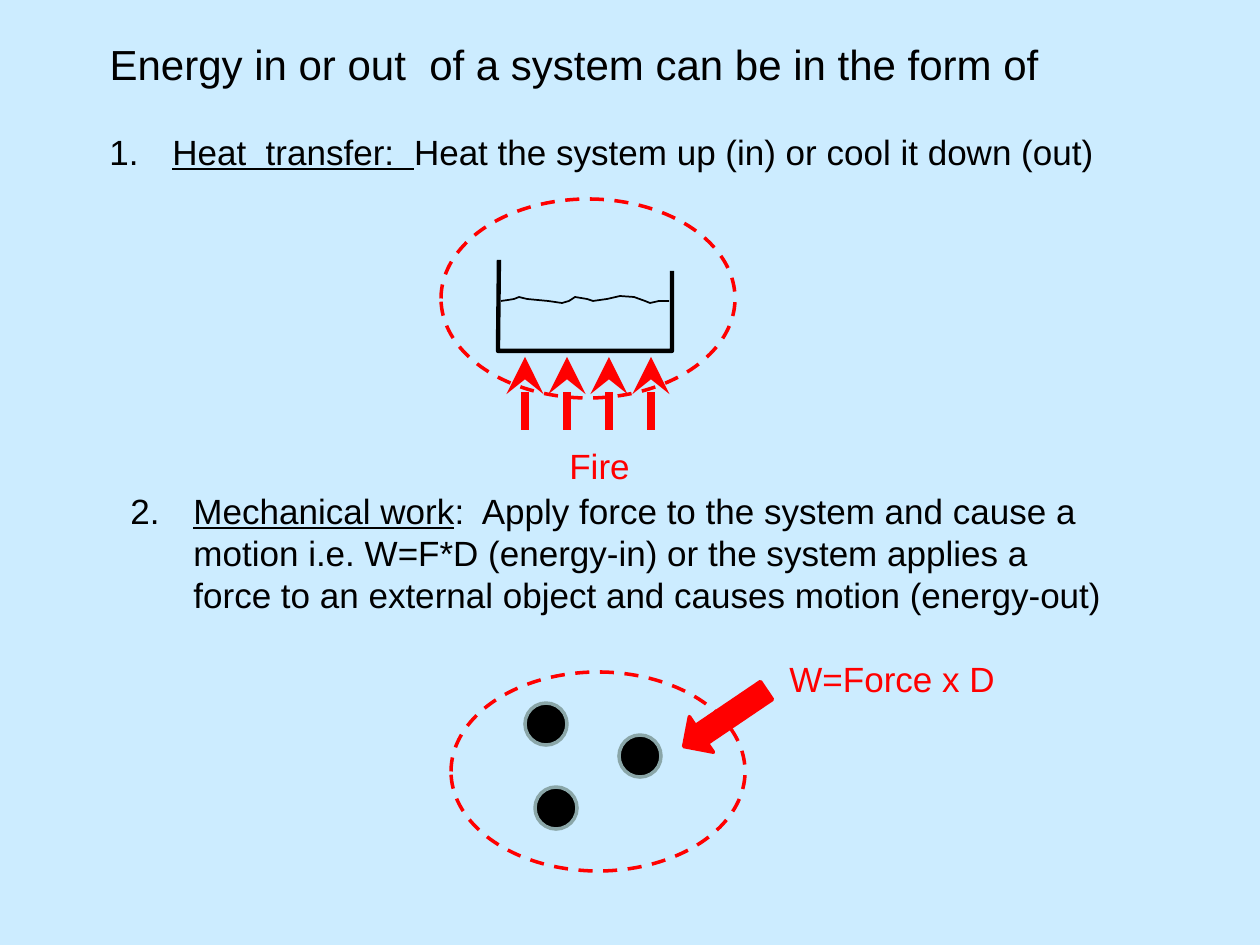
import pptx
import pptx.util
import pptx.dml.color
import pptx.enum.dml
import pptx.enum.shapes
import pptx.enum.text
import lxml.etree

UNIT = 914400 / 126
SHAPE = pptx.enum.shapes.MSO_SHAPE
NS = "http://schemas.openxmlformats.org/drawingml/2006/main"
RED, BLACK, GREY, SKY = "FF0000", "000000", "8AA6A8", "CCECFF"


def px(*nums):
    return [round(n * UNIT) for n in nums]


def paint(fmt, tint):
    fmt.solid()
    fmt.fore_color.rgb = pptx.dml.color.RGBColor.from_string(tint)


deck = pptx.Presentation()
deck.slide_width, deck.slide_height = px(1260, 945)
slide = deck.slides.add_slide(deck.slide_layouts[5])
paint(slide.background.fill, SKY)
shapes = slide.shapes

title = shapes.title
title.left, title.top, title.width, title.height = px(97, 32, 1047, 62)

head = [("Energy in or out  of a system can be in the form of", False)]
heat = [("Heat  transfer:  ", True),
        ("Heat the system up (in) or cool it down (out)", False)]
work = [("Mechanical work", True),
        (":  Apply force to the system and cause a motion i.e. W=F*D "
         "(energy-in) or the system applies a force to an external object "
         "and causes motion (energy-out)", False)]
texts = [
    (title, head, 24, BLACK, 0),
    (px(97, 124, 1047, 55), heat, 20, BLACK, 1),
    (px(118, 483, 1000, 140), work, 20, BLACK, 2),
    (px(557, 438, 168, 55), [("Fire", False)], 20, RED, 0),
    (px(777, 651, 273, 55), [("W=Force x D", False)], 20, RED, 0),
]
for spot, runs, size, tint, num in texts:
    box = spot if spot is title else shapes.add_textbox(*spot)
    frame = box.text_frame
    look = {"word_wrap": True,
            "auto_size": pptx.enum.text.MSO_AUTO_SIZE.NONE,
            "vertical_anchor": pptx.enum.text.MSO_ANCHOR.TOP}
    for key, val in look.items():
        setattr(frame, key, val)
    para = frame.paragraphs[0]
    para.alignment = pptx.enum.text.PP_ALIGN.LEFT
    for words, under in runs:
        run = para.add_run()
        run.text = words
        style = {"name": "Arial", "size": pptx.util.Pt(size),
                 "underline": under}
        for key, val in style.items():
            setattr(run.font, key, val)
        paint(run.font.fill, tint)
    if num:
        props = para._p.get_or_add_pPr()
        dent = px(63)[0]
        props.set("marL", str(dent))
        props.set("indent", str(-dent))
        mark = lxml.etree.SubElement(props, f"{{{NS}}}buAutoNum")
        mark.set("type", "arabicPeriod")
        mark.set("startAt", str(num))

rings = [(451, 672, 294, 199), (441, 199, 294, 199)]
balls = [(525, 703, 42, 42), (619, 735, 42, 42), (535, 787, 42, 42)]
solids = [(SHAPE.OVAL, spot, None, RED, 0) for spot in rings]
solids += [(SHAPE.OVAL, spot, BLACK, GREY, 0) for spot in balls]
solids += [(SHAPE.RIGHT_ARROW, (675, 697, 100, 43), RED, RED, 145.9)]
for kind, spot, fill, edge, turn in solids:
    item = shapes.add_shape(kind, *px(*spot))
    item.shadow.inherit = False
    item.rotation = turn
    paint(item.line.fill, edge)
    item.line.width = pptx.util.Pt(2)
    if fill:
        paint(item.fill, fill)
    else:
        item.fill.background()
        item.line.dash_style = pptx.enum.dml.MSO_LINE.DASH

for step in range(4):
    x = 525 + 42 * step
    flame = shapes.add_connector(
        pptx.enum.shapes.MSO_CONNECTOR.STRAIGHT, *px(x, 430, x, 357))
    paint(flame.line.fill, RED)
    flame.line.width = pptx.util.Pt(4.25)
    tip = lxml.etree.SubElement(flame.line._get_or_add_ln(), f"{{{NS}}}tailEnd")
    for key, val in {"type": "stealth", "w": "lg", "len": "lg"}.items():
        tip.set(key, val)
    lxml.etree.SubElement(flame._element.spPr, f"{{{NS}}}effectLst")

tank = [(499, 260), (498, 351), (672, 351), (672, 271)]
wave = [(501, 301), (508, 300), (514, 299), (519, 297), (527, 299),
        (548, 301), (562, 303), (569, 301), (575, 297), (581, 298),
        (587, 299), (593, 301), (607, 299), (620, 296), (634, 297),
        (645, 301), (650, 303), (659, 301), (669, 301)]
for dots, width in [(tank, 2.5), (wave, 1)]:
    pen = shapes.build_freeform(*dots[0], scale=UNIT)
    pen.add_line_segments(dots[1:], close=False)
    curve = pen.convert_to_shape()
    curve.shadow.inherit = False
    curve.fill.background()
    paint(curve.line.fill, BLACK)
    curve.line.width = pptx.util.Pt(width)

deck.save("out.pptx")
